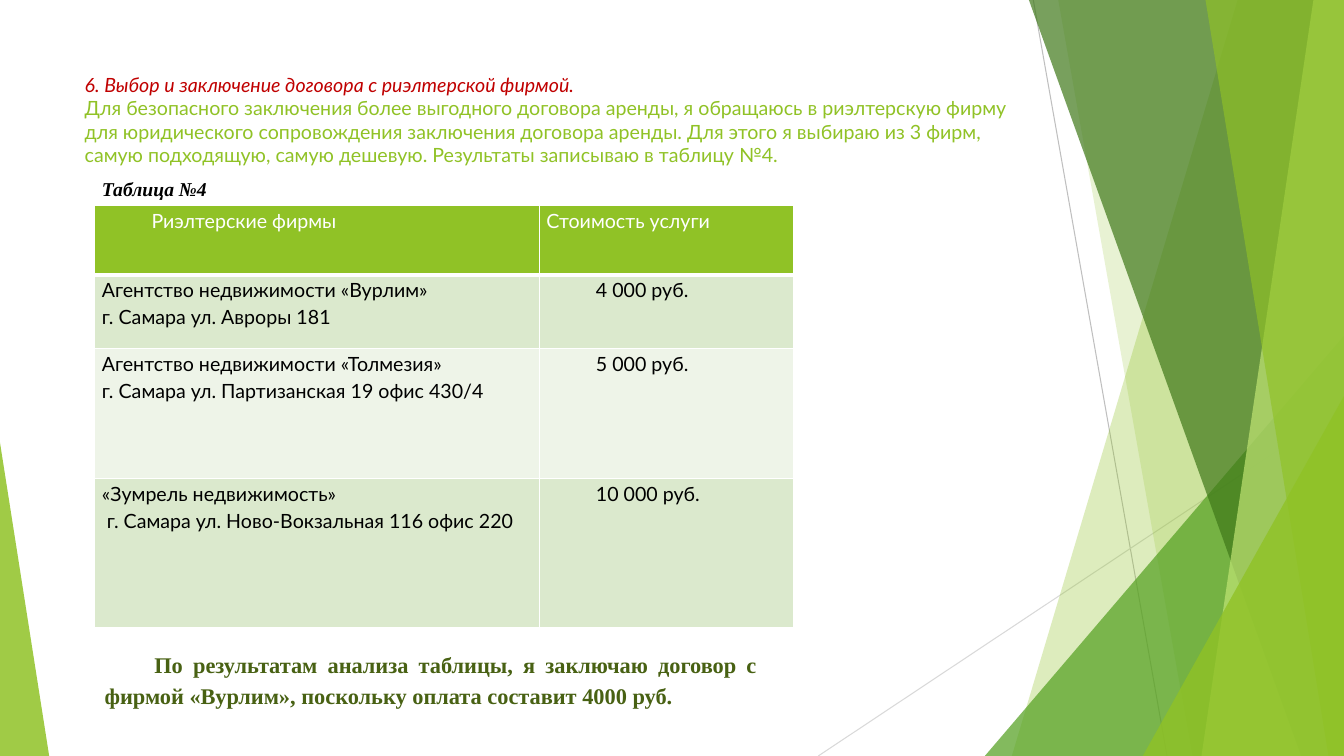
from lxml import etree
from pptx import Presentation
from pptx import util as u
from pptx.dml.color import RGBColor
from pptx.enum import shapes as sh, text as tx
from pptx.oxml.ns import qn

WIDE, HIGH = 33.87, 19.05
LIME, LEAF, PINE, PALE = "90C226", "54A021", "3F7819", "C0E474"
WHITE, BLACK = "FFFFFF", "000000"
TIMES = "Times New Roman"
STEP = 1.25
FACETS = [(31.19, 25.5, LIME, 30), (26.67, 30.05, LIME, 20)]
PANES = [(25.93, 32.79, PINE, 70), (33.1, 30.28, PALE, 70), (30.38, 33.48, LIME, 65)]
ROWS = [
    (1.75, LIME, ["Риэлтерские фирмы"], "Стоимость услуги"),
    (1.85, "DBE9CD", ["Агентство недвижимости «Вурлим»", "г. Самара ул. Авроры 181"], "4 000 руб."),
    (3.28, "EEF4E8", ["Агентство недвижимости «Толмезия»",
                      "г. Самара ул. Партизанская 19 офис 430/4"], "5 000 руб."),
    (3.76, "DBE9CD", ["«Зумрель недвижимость»",
                      " г. Самара ул. Ново-Вокзальная 116 офис 220"], "10 000 руб."),
]


def hue(code):
    """Turn a hex string into a colour."""
    return RGBColor.from_string(code)


def apply(item, **vals):
    """Set each named value on an item."""
    for key, val in vals.items():
        setattr(item, key, val)


def write(para, words, color, size=14, name="Lato", **style):
    """Add a styled run to a paragraph."""
    run = para.add_run()
    run.text = words
    apply(run.font, size=u.Pt(size), name=name, **style)
    run.font.color.rgb = hue(color)


def block(para, indent=0, after=0):
    """Justify a paragraph and indent its first line."""
    apply(para, alignment=tx.PP_ALIGN.JUSTIFY, line_spacing=1.15, space_after=u.Pt(after))
    para._p.get_or_add_pPr().set("indent", str(u.Cm(indent)))


def paint(shape, color, alpha):
    """Fill a shape with a see-through colour and no outline."""
    shape.shadow.inherit = False
    shape.line.fill.background()
    shape.fill.solid()
    shape.fill.fore_color.rgb = hue(color)
    tone = shape._element.spPr.find(qn("a:solidFill"))[0]
    etree.SubElement(tone, qn("a:alpha"), val=str(alpha * 1000))


def line(slide, ends, color):
    """Draw a thin straight line."""
    link = slide.shapes.add_connector(sh.MSO_CONNECTOR.STRAIGHT, *map(u.Cm, ends))
    link.line.width = u.Pt(0.75)
    link.line.color.rgb = hue(color)
    etree.SubElement(link._element.spPr, qn("a:effectLst"))


def facet(slide, top, base, color, alpha):
    """Draw a full-height pane that ends at the right edge."""
    pen = slide.shapes.build_freeform(u.Cm(top), 0)
    pen.add_line_segments([(u.Cm(x), u.Cm(y)) for x, y in
                           [(WIDE, 0), (WIDE, HIGH), (base, HIGH)]])
    paint(pen.convert_to_shape(), color, alpha)


def wedge(slide, box, peak, color, alpha):
    """Draw a triangle with its peak at one side."""
    shape = slide.shapes.add_shape(sh.MSO_SHAPE.ISOSCELES_TRIANGLE, *map(u.Cm, box))
    shape.adjustments[0] = peak
    paint(shape, color, alpha)


def decor(slide):
    """Draw the lines and panes at the slide edges."""
    line(slide, (26.04, 0, 29.41, HIGH), "BFBFBF")
    line(slide, (WIDE, 10.24, 20.62, HIGH), "D9D9D9")
    for pane in FACETS:
        facet(slide, *pane)
    wedge(slide, (24.82, 8.46, 9.05, 10.59), 1, LEAF, 72)
    for pane in PANES:
        facet(slide, *pane)
    wedge(slide, (28.8, 9.98, 5.07, 9.07), 1, LIME, 80)
    wedge(slide, (0, 11.15, 1.24, 7.9), 0, LIME, 85)


def head(slide):
    """Fill the title placeholder."""
    title = slide.shapes.title
    slide.shapes._spTree.append(title._element)
    apply(title, left=u.Cm(1.88), top=u.Cm(1.7), width=u.Cm(23.88), height=u.Cm(3.1))
    frame = title.text_frame
    apply(frame, word_wrap=True, auto_size=tx.MSO_AUTO_SIZE.NONE,
          vertical_anchor=tx.MSO_ANCHOR.TOP)
    para = frame.paragraphs[0]
    para.alignment = tx.PP_ALIGN.LEFT
    write(para, "6. Выбор и заключение договора с риэлтерской фирмой.", "C00000", italic=True)
    para.add_line_break()
    write(para, "Для безопасного заключения более выгодного договора аренды, я обращаюсь в "
          "риэлтерскую фирму для юридического сопровождения заключения договора аренды. "
          "Для этого я выбираю из 3 фирм, самую подходящую, самую дешевую. "
          "Результаты записываю в таблицу №4.", LIME)


def edge(cell, top, base):
    """Give a cell white borders."""
    props = cell._tc.get_or_add_tcPr()
    for side, width in zip("LRTB", (1, 1, top, base)):
        rim = etree.SubElement(props, qn("a:ln" + side), w=str(u.Pt(width)))
        fill = etree.SubElement(rim, qn("a:solidFill"))
        etree.SubElement(fill, qn("a:srgbClr"), val=WHITE)


def fill_cell(cell, lines, indent, color, back):
    """Write lines into a cell and fill it."""
    apply(cell, margin_left=u.Cm(0.18), margin_right=u.Cm(0.18), margin_top=0, margin_bottom=0)
    frame = cell.text_frame
    for pos, words in enumerate(lines):
        para = frame.add_paragraph() if pos else frame.paragraphs[0]
        block(para, indent)
        write(para, words, color, bold=False)
    cell.fill.solid()
    cell.fill.fore_color.rgb = hue(back)


def grid(slide):
    """Build the table of firms and prices."""
    box = map(u.Cm, (2.39, 5.18, 17.61, 10.64))
    table = slide.shapes.add_table(len(ROWS), 2, *box).table
    for col, width in zip(table.columns, (11.2, 6.41)):
        col.width = u.Cm(width)
    for pos, (tall, back, firm, price) in enumerate(ROWS):
        table.rows[pos].height = u.Cm(tall)
        color = BLACK if pos else WHITE
        dents = (0, STEP) if pos else (STEP, 0)
        for col, lines in enumerate((firm, [price])):
            cell = table.cell(pos, col)
            edge(cell, 3 if pos == 1 else 1, 1 if pos else 3)
            fill_cell(cell, lines, dents[col], color, back)


def note(slide, box, words, color, size, wrap, **style):
    """Add a bold indented text box."""
    frame = slide.shapes.add_textbox(*map(u.Cm, box)).text_frame
    apply(frame, word_wrap=wrap, auto_size=tx.MSO_AUTO_SIZE.SHAPE_TO_FIT_TEXT)
    para = frame.paragraphs[0]
    block(para, STEP, 10)
    write(para, words, color, size, TIMES, bold=True, **style)


def main():
    """Build and save the slide."""
    deck = Presentation()
    apply(deck, slide_width=u.Cm(WIDE), slide_height=u.Cm(HIGH))
    slide = deck.slides.add_slide(deck.slide_layouts[5])
    decor(slide)
    head(slide)
    grid(slide)
    note(slide, (2.39, 16.18, 16.94, 1.83), "По результатам анализа таблицы, я заключаю договор с "
         "фирмой «Вурлим», поскольку оплата составит 4000 руб.", "486113", 16, True)
    note(slide, (1.07, 4.24, 4.42, 0.94), "Таблица №4", BLACK, 14, False, italic=True)
    deck.save("out.pptx")


if __name__ == "__main__":
    main()
